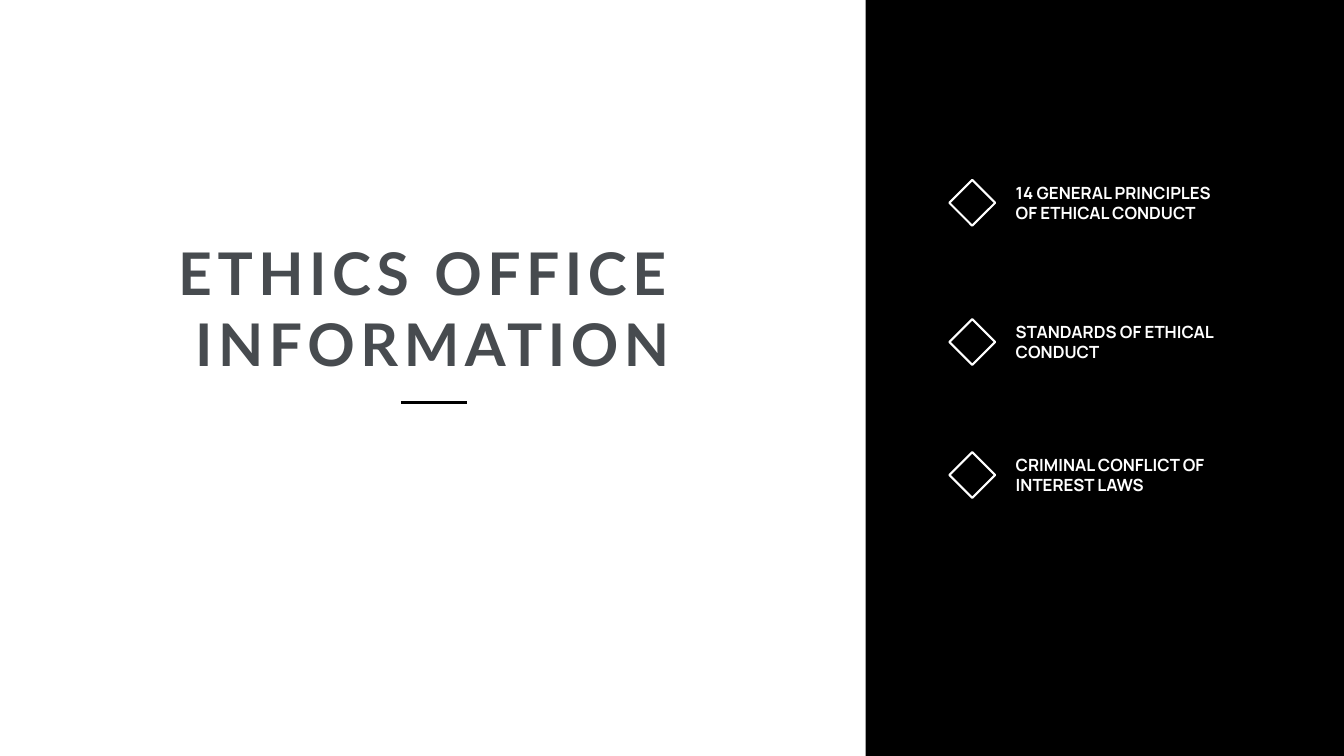
import dataclasses

import pptx
import pptx.dml.color
import pptx.enum.shapes
import pptx.enum.text
import pptx.oxml
import pptx.oxml.ns
import pptx.util

Pt = pptx.util.Pt
Color = pptx.dml.color.RGBColor.from_string
Shape = pptx.enum.shapes.MSO_SHAPE
Anchor = pptx.enum.text.MSO_ANCHOR
Align = pptx.enum.text.PP_ALIGN


@dataclasses.dataclass(frozen=True)
class Theme:
    """Colours, fonts and type sizes of the slide."""

    black: str = "000000"
    white: str = "FFFFFF"
    slate: str = "474B4F"
    head_font: str = "Lato"
    item_font: str = "Manrope"
    head_size: float = 84
    item_size: float = 24
    head_gap: float = 8


THEME = Theme()
ITEMS = (
    (257, "14 GENERAL PRINCIPLES\nOF ETHICAL CONDUCT"),
    (455.8, "STANDARDS OF ETHICAL\nCONDUCT"),
    (645.8, "CRIMINAL CONFLICT OF\nINTEREST LAWS"),
)
MARK_LEFT, ITEM_LEFT = 1355.8, 1443.6
ITEM_WIDTH, ITEM_HEIGHT = 316.5, 65.5


def write(box, text, font, size, color, align, anchor, gap=None):
    """Fill a box with bold text, one paragraph per line."""
    frame = box.text_frame
    frame.text = text
    frame.word_wrap = False
    frame.auto_size = pptx.enum.text.MSO_AUTO_SIZE.SHAPE_TO_FIT_TEXT
    frame.vertical_anchor = anchor
    for para in frame.paragraphs:
        para.alignment = align
        for run in para.runs:
            run.font.name = font
            run.font.size = Pt(size)
            run.font.bold = True
            run.font.color.rgb = Color(color)
            if gap:
                run._r.get_or_add_rPr().set("spc", str(round(gap * 100)))


def add_title(slide, text):
    """Place and format the title placeholder."""
    title = slide.shapes.title
    title.left, title.top = Pt(219.6), Pt(334.8)
    title.width, title.height = Pt(796.3), Pt(211)
    write(title, text, THEME.head_font, THEME.head_size, THEME.slate,
          Align.CENTER, Anchor.TOP, THEME.head_gap)


def add_panel(slide, left, width, height):
    """Draw the dark panel on the right."""
    panel = slide.shapes.add_shape(
        Shape.RECTANGLE, Pt(left), 0, Pt(width), Pt(height))
    panel.shadow.inherit = False
    panel.fill.solid()
    panel.fill.fore_color.rgb = Color(THEME.black)
    panel.line.fill.background()


def add_rule(slide, left, right, top):
    """Draw the short rule below the title."""
    rule = slide.shapes.add_connector(
        pptx.enum.shapes.MSO_CONNECTOR.STRAIGHT,
        Pt(left), Pt(top), Pt(right), Pt(top))
    rule.line.color.rgb = Color(THEME.black)
    rule.line.width = Pt(4.5)
    rule._element.spPr.append(
        pptx.oxml.parse_xml("<a:effectLst %s/>" % pptx.oxml.ns.nsdecls("a")))


def add_item(slide, top, text):
    """Add a diamond marker with its label."""
    mark = slide.shapes.add_shape(
        Shape.DIAMOND, Pt(MARK_LEFT), Pt(top), Pt(ITEM_HEIGHT), Pt(ITEM_HEIGHT))
    mark.shadow.inherit = False
    mark.fill.background()
    mark.line.color.rgb = Color(THEME.white)
    mark.line.width = Pt(3)
    label = slide.shapes.add_textbox(
        Pt(ITEM_LEFT), Pt(top), Pt(ITEM_WIDTH), Pt(ITEM_HEIGHT))
    write(label, text, THEME.item_font, THEME.item_size, THEME.white,
          Align.LEFT, Anchor.MIDDLE)


def main():
    """Build and save the slide."""
    deck = pptx.Presentation()
    deck.slide_width, deck.slide_height = Pt(1919.5), Pt(1080)
    slide = deck.slides.add_slide(deck.slide_layouts[5])
    add_panel(slide, 1236.2, 683.3, 1080)
    add_rule(slide, 572.4, 666.7, 575.3)
    add_title(slide, "ETHICS OFFICE \nINFORMATION")
    for top, text in ITEMS:
        add_item(slide, top, text)
    deck.save("out.pptx")


if __name__ == "__main__":
    main()
